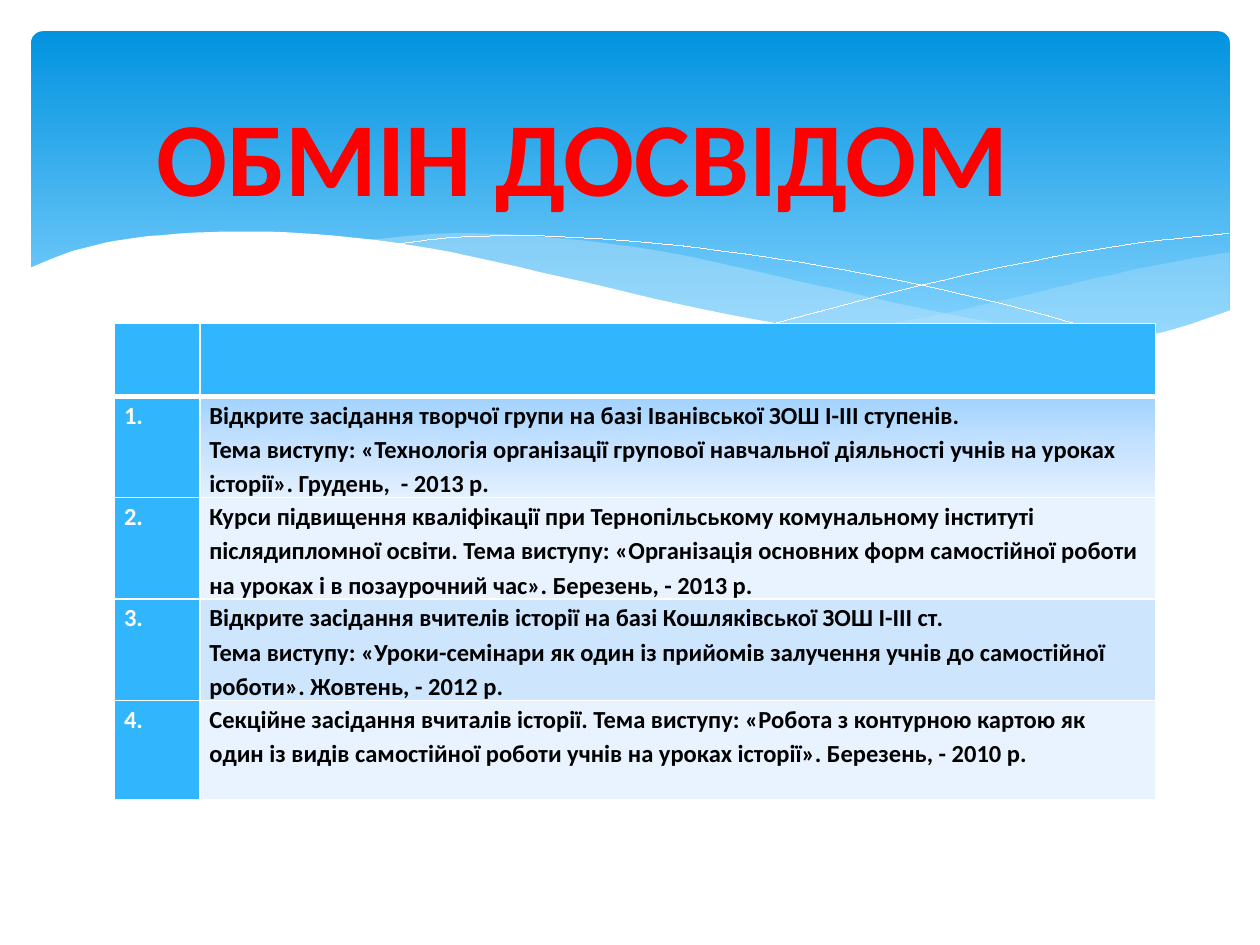
from copy import deepcopy

from lxml import etree
from pptx import Presentation
from pptx import util as u
from pptx.dml.color import RGBColor
from pptx.enum import shapes, text
from pptx.oxml.ns import qn

WHITE = RGBColor(0xFF, 0xFF, 0xFF)
BLACK = RGBColor(0, 0, 0)
RED = RGBColor(0xFF, 0, 0)
SKY = RGBColor(0x02, 0x93, 0xE0)
SKY_LIGHT = RGBColor(0x83, 0xD3, 0xFE)
MIST = RGBColor(0xC6, 0xE7, 0xFC)
ACCENT = RGBColor(0x31, 0xB6, 0xFD)
BAND_DARK = RGBColor(0xCE, 0xE5, 0xFE)
BAND_LIGHT = RGBColor(0xE8, 0xF3, 0xFF)
FIRST_BAND = [(0, RGBColor(0xA1, 0xD3, 0xFF)), (0.5, RGBColor(0xC6, 0xE2, 0xFF)),
              (1, RGBColor(0xE3, 0xF0, 0xFF))]

FONT = "Calibri"
POINTS_PER_CM = 100  # freeform points are whole numbers, so use 0.01 cm steps
STEPS = 6            # straight pieces drawn between two neighbouring knots

# Wave edges: a few (x, y) knots in cm, left to right, joined by smooth()
RIGHT_TOP = [(16.79, 6.73), (19.13, 6.3), (21.87, 5.66), (23.39, 5.33), (24.79, 5.08)]
RIGHT_BOTTOM = [(16.79, 6.73), (18.26, 6.91), (20.4, 7.06), (22.58, 6.91),
                (23.75, 6.65), (24.79, 6.27)]
MIDDLE_TOP = [(7.26, 4.85), (9.17, 4.7), (11.23, 4.8), (13.41, 5.08), (15.98, 5.64),
              (18.82, 6.27), (21.26, 6.73), (22.68, 6.93)]
MIDDLE_BOTTOM = [(7.26, 4.85), (9.19, 5.16), (11.4, 5.64), (14.38, 6.3), (16.89, 6.76),
                 (19, 7.01), (20.78, 7.06), (22.68, 6.93)]
FALLING_LINE = [(7.85, 4.95), (8.97, 4.8), (10.67, 4.75), (12.95, 4.88), (15.44, 5.18),
                (17.65, 5.56), (20.19, 6.12), (23.04, 6.91)]
RISING_LINE = [(15.57, 6.53), (18.29, 5.82), (20.47, 5.33), (22.73, 4.93), (24.77, 4.7)]
FRONT_TOP = [(0.58, 5.41), (1.5, 5.05), (2.69, 4.8), (4.5, 4.67), (6.35, 4.72),
             (8.64, 5), (11.35, 5.59), (14.1, 6.22), (16.46, 6.65), (18.44, 6.91),
             (20.55, 7.04), (22.23, 6.93), (23.62, 6.65), (24.82, 6.25)]
FRONT_BASE = [(0.58, 8.36), (24.82, 8.36)]

TALKS = [
    (["Відкрите засідання творчої групи на базі Іванівської ЗОШ І-ІІІ ступенів.",
      "Тема виступу: «Технологія організації групової навчальної діяльності учнів "
      "на уроках історії». Грудень,  - 2013 р."], FIRST_BAND),
    (["Курси підвищення кваліфікації при Тернопільському комунальному інституті "
      "післядипломної освіти. Тема виступу: «Організація основних форм самостійної "
      "роботи на уроках і в позаурочний час». Березень, - 2013 р."], BAND_LIGHT),
    (["Відкрите засідання вчителів історії на базі Кошляківської ЗОШ І-ІІІ ст.",
      "Тема виступу: «Уроки-семінари як один із прийомів залучення учнів до "
      "самостійної роботи». Жовтень, - 2012 р."], BAND_DARK),
    (["Секційне засідання вчиталів історії. Тема виступу: «Робота з контурною картою "
      "як один із видів самостійної роботи учнів на уроках історії». "
      "Березень, - 2010 р."], BAND_LIGHT),
]


def smooth(knots):
    """Join knots by cubic curves; the slope at a knot follows its neighbours."""
    slopes = []
    for i in range(len(knots)):
        (x0, y0), (x1, y1) = knots[max(i - 1, 0)], knots[min(i + 1, len(knots) - 1)]
        slopes.append((y1 - y0) / (x1 - x0))
    points = [knots[0]]
    for (x0, y0), (x1, y1), m0, m1 in zip(knots, knots[1:], slopes, slopes[1:]):
        width = x1 - x0
        for step in range(1, STEPS + 1):
            t = step / STEPS
            ease = t * t * (3 - 2 * t)
            bend = t * (1 - t) * width * (m0 * (1 - t) - m1 * t)
            points.append((x0 + t * width, y0 + (y1 - y0) * ease + bend))
    return points


class SlideBuilder:
    def __init__(self, slide, font):
        self.s = slide
        self.font = font

    def add_run(self, p, words, size, color):
        r = p.add_run()
        r.text = words
        r.font.name, r.font.size, r.font.bold = self.font, u.Pt(size), True
        r.font.color.rgb = color

    def paint(self, fill, props, color):
        """Fill with one colour, or downwards with a list of (position, colour)."""
        if isinstance(color, RGBColor):
            fill.solid()
            fill.fore_color.rgb = color
            return
        fill.gradient()
        fill.gradient_angle = 270
        stops = next(props.iter(qn("a:gsLst")))
        while len(stops) < len(color):
            stops.append(deepcopy(stops[-1]))
        for stop, (position, rgb) in zip(fill.gradient_stops, color):
            stop.position = position
            stop.color.rgb = rgb

    def panel(self, left, top, width, height, color, corner):
        sp = self.s.shapes.add_shape(shapes.MSO_SHAPE.ROUNDED_RECTANGLE, u.Cm(left),
                                     u.Cm(top), u.Cm(width), u.Cm(height))
        sp.adjustments[0] = corner
        sp.shadow.inherit = False
        sp.line.fill.background()
        self.paint(sp.fill, sp._element.spPr, color)

    def freeform(self, points, close):
        grid = [(round(x * POINTS_PER_CM), round(y * POINTS_PER_CM)) for x, y in points]
        builder = self.s.shapes.build_freeform(*grid[0], scale=u.Cm(1 / POINTS_PER_CM))
        builder.add_line_segments(grid[1:], close=close)
        sp = builder.convert_to_shape()
        sp.shadow.inherit = False
        return sp

    def wave(self, top, bottom, color, opacity=100):
        """Fill the area between two edges: out along the top, back along the bottom."""
        sp = self.freeform(smooth(top) + smooth(bottom)[::-1], True)
        sp.line.fill.background()
        self.paint(sp.fill, sp._element.spPr, color)
        if opacity < 100:
            rgb = next(sp._element.spPr.iter(qn("a:srgbClr")))
            etree.SubElement(rgb, qn("a:alpha"), val=str(opacity * 1000))

    def hairline(self, knots, color):
        sp = self.freeform(smooth(knots), False)
        sp.fill.background()
        sp.line.color.rgb = color
        sp.line.width = u.Pt(0.01)

    def title(self, words, left, top, width, height, size, color):
        sp = self.s.shapes.title
        sp.left, sp.top, sp.width, sp.height = map(u.Cm, (left, top, width, height))
        self.s.shapes._spTree.append(sp._element)  # bring in front of the waves
        tf = sp.text_frame
        tf.word_wrap = True
        tf.auto_size = text.MSO_AUTO_SIZE.SHAPE_TO_FIT_TEXT
        tf.vertical_anchor = text.MSO_ANCHOR.MIDDLE
        p = tf.paragraphs[0]
        p.alignment = text.PP_ALIGN.LEFT
        self.add_run(p, words, size, color)

    def table(self, left, top, widths, heights):
        frame = self.s.shapes.add_table(len(heights), len(widths), u.Cm(left), u.Cm(top),
                                        u.Cm(sum(widths)), u.Cm(sum(heights)))
        tbl = frame.table
        tbl.first_row = tbl.horz_banding = False
        for column, width in zip(tbl.columns, widths):
            column.width = u.Cm(width)
        for row, height in zip(tbl.rows, heights):
            row.height = u.Cm(height)
        return tbl

    def cell(self, cell, lines, fill, color, top=1, bottom=1):
        props = cell._tc.get_or_add_tcPr()
        for side, points in zip("LRTB", (1, 1, top, bottom)):
            ln = etree.SubElement(props, qn("a:ln" + side), w=str(u.Pt(points)))
            solid = etree.SubElement(ln, qn("a:solidFill"))
            etree.SubElement(solid, qn("a:srgbClr"), val=str(WHITE))
        self.paint(cell.fill, props, fill)
        cell.margin_left = cell.margin_right = u.Cm(0.19)
        cell.margin_top = cell.margin_bottom = 0
        tf = cell.text_frame
        for i, line in enumerate(lines):
            p = tf.add_paragraph() if i else tf.paragraphs[0]
            p.line_spacing = 1.15
            self.add_run(p, line, 14, color)


def main():
    prs = Presentation()
    prs.slide_width, prs.slide_height = u.Cm(25.4), u.Cm(19.05)
    b = SlideBuilder(prs.slides.add_slide(prs.slide_layouts[5]), FONT)

    # Sky panel with waves
    b.panel(0.63, 0.63, 24.16, 6.86, [(0, SKY), (0.9, SKY_LIGHT)], 0.034)
    b.wave(RIGHT_TOP, RIGHT_BOTTOM, MIST, 29)
    b.wave(MIDDLE_TOP, MIDDLE_BOTTOM, MIST, 40)
    for line in (FALLING_LINE, RISING_LINE):
        b.hairline(line, WHITE)
    b.wave(FRONT_TOP, FRONT_BASE, WHITE)

    b.title("ОБМІН ДОСВІДОМ", 2.9, 1.7, 20.8, 2.82, 60, RED)

    # Table of talks under an empty header row
    tbl = b.table(2.31, 6.52, [1.72, 19.26], [1.47, 2.01, 1.88, 2.01, 2.01])
    for column in range(2):
        b.cell(tbl.cell(0, column), [], ACCENT, WHITE, bottom=3)
    for row, (lines, fill) in enumerate(TALKS, 1):
        top = 3 if row == 1 else 1
        b.cell(tbl.cell(row, 0), [f"{row}."], ACCENT, WHITE, top)
        b.cell(tbl.cell(row, 1), lines, fill, BLACK, top)

    prs.save("out.pptx")


if __name__ == "__main__":
    main()
